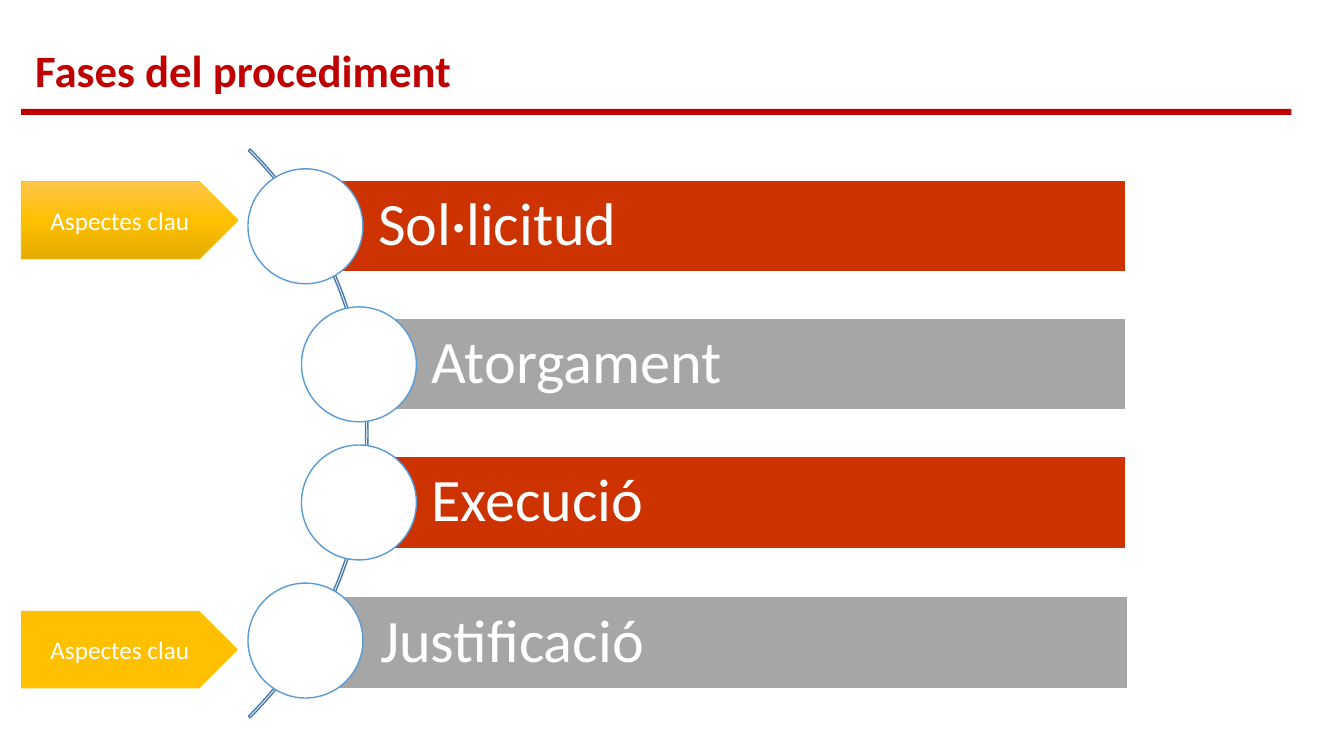
import copy
from dataclasses import dataclass

import pptx
import pptx.dml.color
import pptx.enum.shapes
import pptx.enum.text
import pptx.oxml.ns
import pptx.util

Inches = pptx.util.Inches
Pt = pptx.util.Pt
MSO = pptx.enum.shapes.MSO_SHAPE


@dataclass(frozen=True)
class Theme:
    """Colours, font and type sizes of the slide."""
    font: str = "Calibri"
    title: str = "C00000"
    bars: tuple = ("CC3300", "A6A6A6")
    white: str = "FFFFFF"
    arc: str = "497CAB"
    ring: str = "5B9BD5"
    tag: str = "FFC000"
    tag_gradient: tuple = ((0, "FFC64B"), (0.5, "FFC000"), (1, "E3AB00"))
    title_size: int = 32
    phase_size: int = 43
    tag_size: int = 18


THEME = Theme()


def rgb(color):
    """Return the RGB colour for a hex string."""
    return pptx.dml.color.RGBColor.from_string(color)


def add_shape(s, kind, box, fill=None, line=None, width=1):
    """Add a flat preset shape in a box given in inches."""
    sp = s.shapes.add_shape(kind, *map(Inches, box))
    sp.shadow.inherit = False
    if fill:
        sp.fill.solid()
        sp.fill.fore_color.rgb = rgb(fill)
    else:
        sp.fill.background()
    if line:
        sp.line.color.rgb = rgb(line)
        sp.line.width = Pt(width)
    else:
        sp.line.fill.background()
    return sp


def set_text(sp, text, size, color, margins, align="LEFT", anchor="MIDDLE", bold=False):
    """Write one formatted paragraph into a shape."""
    tf = sp.text_frame
    tf.word_wrap = True
    tf.vertical_anchor = pptx.enum.text.MSO_ANCHOR[anchor]
    tf.margin_left, tf.margin_top, tf.margin_right, tf.margin_bottom = map(Inches, margins)
    p = tf.paragraphs[0]
    p.text = text
    p.alignment = pptx.enum.text.PP_ALIGN[align]
    font = p.runs[0].font
    font.name, font.size, font.bold = THEME.font, Pt(size), bold
    font.color.rgb = rgb(color)
    return p


def add_header(s, x, y, w):
    """Place the title and the rule below it."""
    tb = s.shapes.add_textbox(*map(Inches, (x + 0.14, y, w, 0.64)))
    set_text(tb, "Fases del procediment", THEME.title_size, THEME.title,
             (0, 0.05, 0.1, 0.05), anchor="TOP", bold=True)
    add_shape(s, MSO.RECTANGLE, (x, y + 0.71, w, 0.06), THEME.title)


def add_phase(s, x, y, right, name, fill, nudge):
    """Place a bar with its circle centred on the bar's left edge."""
    height, diameter = 0.91, 1.14
    bar = add_shape(s, MSO.RECTANGLE, (x + nudge, y + nudge, right - x, height), fill, THEME.white)
    p = set_text(bar, name, THEME.phase_size, THEME.white, (0.72, 0.12, 0.12, 0.12))
    p.line_spacing = 0.9
    circle = (x - diameter / 2, y + (height - diameter) / 2, diameter, diameter)
    add_shape(s, MSO.OVAL, circle, THEME.white, THEME.ring)


def add_phases(s, x, y, w):
    """Place the arc and the four phases along it."""
    pitch, indent = 1.37, 0.53
    arc = add_shape(s, MSO.BLOCK_ARC, (x - 7.36, y - 1.48, 7.98, 7.98), line=THEME.arc)
    for i, value in enumerate((189, 27, 0.003)):
        arc.adjustments[i] = value
    phases = (("Sol·licitud", 0, 0), ("Atorgament", indent, 0),
              ("Execució", indent, 0), ("Justificació", 0, 0.02))
    for i, (name, shift, nudge) in enumerate(phases):
        add_phase(s, x + shift, y + i * pitch, x + w, name, THEME.bars[i % 2], nudge)


def set_gradient(sp, stops):
    """Fill a shape with a three-stop gradient from top to bottom."""
    sp.fill.gradient()
    sp.fill.gradient_angle = 270
    gs_list = sp._element.spPr.find(".//" + pptx.oxml.ns.qn("a:gsLst"))
    gs_list.insert(1, copy.deepcopy(gs_list[0]))
    for stop, (position, color) in zip(sp.fill.gradient_stops, stops):
        stop.position = position
        stop.color.rgb = rgb(color)


def add_tag(s, x, y, gradient=False):
    """Place a pointed tag that marks a phase."""
    tag = add_shape(s, MSO.PENTAGON, (x, y, 2.15, 0.77), THEME.tag,
                    THEME.tag if gradient else None, 0.5)
    if gradient:
        set_gradient(tag, THEME.tag_gradient)
    set_text(tag, "Aspectes clau", THEME.tag_size, THEME.white,
             (0.1, 0.05, 0.1, 0.05), align="CENTER")


def main():
    """Build and save the slide."""
    prs = pptx.Presentation()
    prs.slide_width, prs.slide_height = Inches(13.33), Inches(7.5)
    s = prs.slides.add_slide(prs.slide_layouts[6])
    left = 0.21
    add_header(s, left, 0.37, 12.6)
    add_phases(s, 3.03, 1.79, 8.14)
    add_tag(s, left, 1.8, gradient=True)
    add_tag(s, left, 6.06)
    prs.save("out.pptx")


if __name__ == "__main__":
    main()
